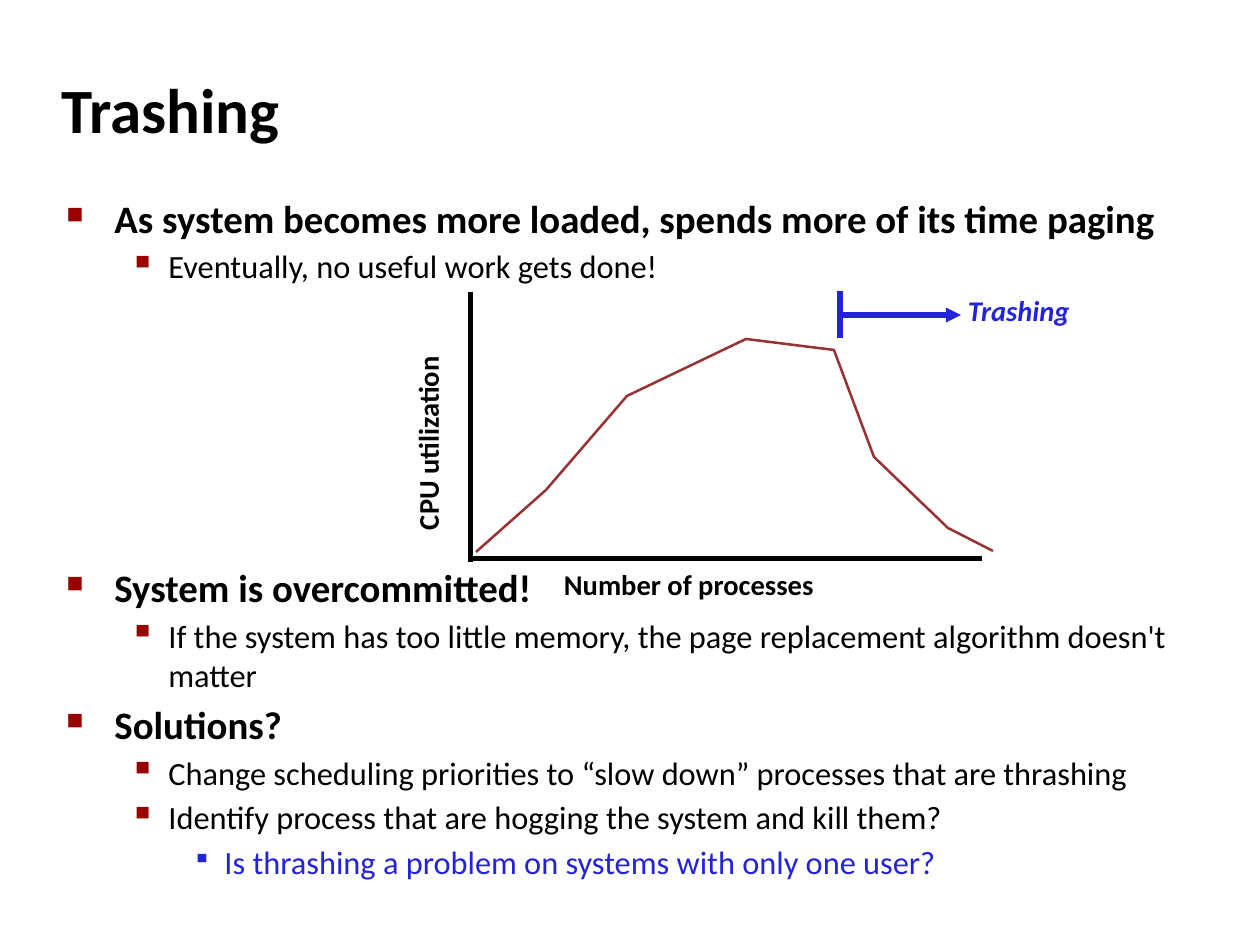
"""Build a slide on trashing: bullet text around a sketch of CPU utilization."""
from pptx import Presentation
from pptx.dml.color import RGBColor as RGB
from pptx.enum.shapes import MSO_CONNECTOR as LINK
from pptx.enum.text import MSO_ANCHOR as ANCHOR
from pptx.oxml.ns import qn
from pptx.util import Emu, Pt
from lxml.etree import SubElement as Sub

PX = 914400 / 126
BLACK = RGB(0x00, 0x00, 0x00)
RED = RGB(0x99, 0x00, 0x00)
BROWN = RGB(0x99, 0x33, 0x33)
BLUE = RGB(0x23, 0x23, 0xDC)


def px(*nums):
    return [Emu(round(n * PX)) for n in nums]


def write(para, text, size, color=BLACK, **style):
    run = para.add_run()
    run.text = text
    run.font.color.rgb = color
    look = {"name": "Calibri", "size": Pt(size), "bold": True, **style}
    for key, val in look.items():
        setattr(run.font, key, val)


deck = Presentation()
deck.slide_width, deck.slide_height = px(1260, 945)
slide = deck.slides.add_slide(deck.slide_layouts[6])
shapes = slide.shapes

title = shapes.add_textbox(*px(49, 60, 1046, 105)).text_frame
title.word_wrap = True
title.vertical_anchor = ANCHOR.MIDDLE
title.paragraphs[0].line_spacing = 0.94
write(title.paragraphs[0], "Trashing", 36)

levels = [
    {"size": 22.2, "bold": True, "color": BLACK, "left": 48, "hang": 48,
     "gap": 3.9, "sign": "■", "tint": RED, "pct": 60},
    {"size": 18.5, "bold": False, "color": BLACK, "left": 102, "hang": 39,
     "gap": 3.2, "sign": "▪", "tint": RED, "pct": 110},
    {"size": 18.5, "bold": False, "color": BLUE, "left": 158, "hang": 32,
     "gap": 3.2, "sign": "▪", "tint": BLUE, "pct": 80},
]
points = [
    (0, "As system becomes more loaded, spends more of its time paging", 0),
    (1, "Eventually, no useful work gets done!", None),
    (0, "System is overcommitted!", 159),
    (1, "If the system has too little memory, the page replacement "
        "algorithm doesn't matter", None),
    (0, "Solutions?", None),
    (1, "Change scheduling priorities to “slow down” processes "
        "that are thrashing", None),
    (1, "Identify process that are hogging the system and kill them?", None),
    (2, "Is thrashing a problem on systems with only one user?", None),
]
body = shapes.add_textbox(*px(54, 188, 1166, 757)).text_frame
body.word_wrap = True
for num, (depth, text, gap) in enumerate(points):
    para = body.add_paragraph() if num else body.paragraphs[0]
    level = levels[depth]
    para.level = depth
    para.space_before = Pt(level["gap"] if gap is None else gap)
    write(para, text, level["size"], level["color"], bold=level["bold"])
    props = para._p.get_or_add_pPr()
    left, hang = px(level["left"], level["hang"])
    props.set("marL", str(left))
    props.set("indent", str(-hang))
    tint = Sub(props, qn("a:buClr"))
    Sub(tint, qn("a:srgbClr")).set("val", str(level["tint"]))
    Sub(props, qn("a:buSzPct")).set("val", str(level["pct"] * 1000))
    Sub(props, qn("a:buChar")).set("char", level["sign"])

lines = [
    ((471, 292, 471, 562), BLACK, False),
    ((471, 559, 982, 559), BLACK, False),
    ((842, 315, 961, 315), BLUE, True),
    ((840, 291, 840, 338), BLUE, False),
]
for ends, color, arrow in lines:
    link = shapes.add_connector(LINK.STRAIGHT, *px(*ends))
    link.line.color.rgb = color
    link.line.width = Pt(2.89)
    props = link._element.spPr
    if arrow:
        Sub(props.find(qn("a:ln")), qn("a:tailEnd")).set("type", "triangle")
    Sub(props, qn("a:effectLst"))

dots = [(476, 552), (546, 490), (627, 396), (746, 339),
        (834, 350), (874, 457), (948, 528), (993, 551)]
pen = shapes.build_freeform(*dots[0], scale=PX)
pen.add_line_segments(dots[1:], close=False)
curve = pen.convert_to_shape()
curve.shadow.inherit = False
curve.fill.background()
curve.line.color.rgb = BROWN
curve.line.width = Pt(1.45)

labels = [
    ("Number of processes", (564, 570, 619, 33), 0, BLACK, False),
    ("CPU utilization", (328, 412, 203, 33), 270, BLACK, False),
    ("Trashing", (968, 296, 139, 34), 0, BLUE, True),
]
for text, area, turn, color, slant in labels:
    box = shapes.add_textbox(*px(*area))
    box.rotation = turn
    frame = box.text_frame
    frame.word_wrap = True
    for side in ("left", "top", "right", "bottom"):
        setattr(frame, f"margin_{side}", 0)
    frame.paragraphs[0].line_spacing = 0.94
    write(frame.paragraphs[0], text, 16.3, color, italic=slant)

deck.save("out.pptx")
